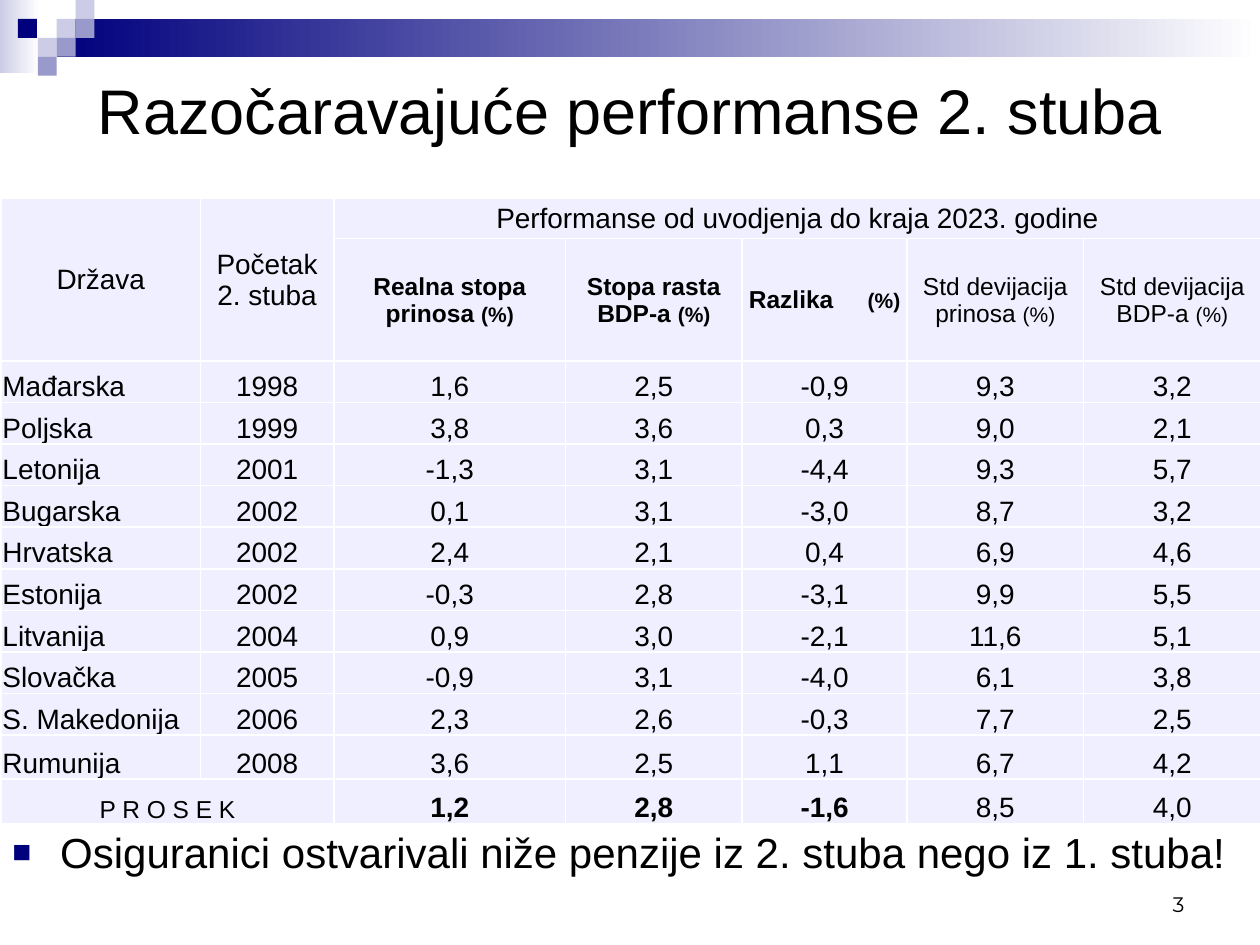
"""Build the slide on the disappointing performance of the second pension pillar."""
from dataclasses import dataclass

import lxml.etree
import pptx
import pptx.dml.color
import pptx.enum.shapes
import pptx.enum.text
import pptx.oxml
import pptx.oxml.ns
import pptx.util

ALIGN = pptx.enum.text.PP_ALIGN
ANCHOR = pptx.enum.text.MSO_ANCHOR
COLORS = {"navy": "00007D", "violet": "9999CC", "lilac": "CCCCE6",
          "cell": "EFEFFF", "white": "FFFFFF", "black": "000000"}
WIDTH, HEIGHT = pptx.util.Inches(10), pptx.util.Inches(7.5)
UNIT = pptx.util.Inches(0.15)
COLUMN_WIDTHS = [1.58, 1.06, 1.84, 1.4, 1.31, 1.4, 1.41]
ROW_HEIGHTS = [0.32, 0.97] + [0.33] * 9 + [0.35] * 2
COUNTRIES = [
    "Mađarska 1998 1,6 2,5 -0,9 9,3 3,2",
    "Poljska 1999 3,8 3,6 0,3 9,0 2,1",
    "Letonija 2001 -1,3 3,1 -4,4 9,3 5,7",
    "Bugarska 2002 0,1 3,1 -3,0 8,7 3,2",
    "Hrvatska 2002 2,4 2,1 0,4 6,9 4,6",
    "Estonija 2002 -0,3 2,8 -3,1 9,9 5,5",
    "Litvanija 2004 0,9 3,0 -2,1 11,6 5,1",
    "Slovačka 2005 -0,9 3,1 -4,0 6,1 3,8",
    "S. Makedonija 2006 2,3 2,6 -0,3 7,7 2,5",
    "Rumunija 2008 3,6 2,5 1,1 6,7 4,2",
]
AVERAGES = ["1,2", "2,8", "-1,6", "8,5", "4,0"]
MEASURES = ["Realna stopa prinosa", "Stopa rasta BDP-a", "Razlika",
            "Std devijacija prinosa", "Std devijacija BDP-a"]
BOLD_MEASURES = 3


@dataclass
class Block:
    """A header rectangle, measured in grid units; a second colour makes a gradient."""
    column: float
    row: float
    color: str
    columns: float = 1
    rows: float = 1
    end_color: str = ""


@dataclass
class TextPart:
    """One run of text with its look; spacing is extra points after each letter."""
    text: str
    size: float = 16
    bold: bool = False
    font: str = "Arial"
    spacing: float = 0


BLOCKS = [
    Block(0, 0, "lilac", 2.07, 3.87, "white"),
    Block(3, 1, "navy", 63.67, 2, "white"),
    Block(3, 1, "lilac"),
    Block(4, 0, "lilac"),
    Block(4, 1, "violet"),
    Block(2, 2, "lilac"),
    Block(0.95, 1, "navy"),
    Block(3, 2, "violet"),
    Block(2, 3, "violet"),
]


def rgb(name: str) -> pptx.dml.color.RGBColor:
    """Return a named colour."""
    return pptx.dml.color.RGBColor.from_string(COLORS[name])


def draw_block(slide, block: Block) -> None:
    """Draw one header rectangle."""
    shape = slide.shapes.add_shape(
        pptx.enum.shapes.MSO_SHAPE.RECTANGLE, int(block.column * UNIT), int(block.row * UNIT),
        int(block.columns * UNIT), int(block.rows * UNIT))
    shape.shadow.inherit = False
    shape.line.fill.background()
    if block.end_color:
        shape.fill.gradient()
        shape.fill.gradient_angle = 0
        for stop, color in zip(shape.fill.gradient_stops, (block.color, block.end_color)):
            stop.color.rgb = rgb(color)
    else:
        shape.fill.solid()
        shape.fill.fore_color.rgb = rgb(block.color)


def write(text_frame, parts: list[TextPart], alignment=ALIGN.CENTER, anchor=ANCHOR.MIDDLE):
    """Write the runs into the first paragraph and return it."""
    text_frame.word_wrap = True
    text_frame.vertical_anchor = anchor
    paragraph = text_frame.paragraphs[0]
    paragraph.alignment = alignment
    for part in parts:
        run = paragraph.add_run()
        run.text = part.text
        run.font.size = pptx.util.Pt(part.size)
        run.font.bold = part.bold
        run.font.name = part.font
        run.font.color.rgb = rgb("black")
        if part.spacing:
            run.font._element.set("spc", str(round(part.spacing * 100)))
    return paragraph


def add_text(slide, left: float, top: float, width: float, height: float,
             parts: list[TextPart], alignment, anchor):
    """Add a text box placed by shares of the slide's size and return its paragraph."""
    box = slide.shapes.add_textbox(int(left * WIDTH), int(top * HEIGHT),
                                   int(width * WIDTH), int(height * HEIGHT))
    return write(box.text_frame, parts, alignment, anchor)


def add_bullet(paragraph) -> None:
    """Give the paragraph a hanging square bullet."""
    properties = paragraph._p.get_or_add_pPr()
    properties.set("marL", str(pptx.util.Inches(0.38)))
    properties.set("indent", str(pptx.util.Inches(-0.38)))
    color = lxml.etree.SubElement(properties, pptx.oxml.ns.qn("a:buClr"))
    lxml.etree.SubElement(color, pptx.oxml.ns.qn("a:srgbClr"), val=COLORS["navy"])
    lxml.etree.SubElement(properties, pptx.oxml.ns.qn("a:buSzPct"), val="75000")
    lxml.etree.SubElement(properties, pptx.oxml.ns.qn("a:buFont"), typeface="Arial")
    lxml.etree.SubElement(properties, pptx.oxml.ns.qn("a:buChar"), char="■")


def style_cell(cell) -> None:
    """Fill the cell, tighten its margins and draw white borders."""
    cell.fill.solid()
    cell.fill.fore_color.rgb = rgb("cell")
    cell.margin_left = cell.margin_right = cell.margin_top = pptx.util.Inches(0.01)
    cell.margin_bottom = 0
    properties = cell._tc.get_or_add_tcPr()
    for index, side in enumerate(("lnL", "lnR", "lnT", "lnB")):
        properties.insert(index, pptx.oxml.parse_xml(
            f'<a:{side} {pptx.oxml.ns.nsdecls("a")} w="12700"><a:solidFill>'
            f'<a:srgbClr val="{COLORS["white"]}"/></a:solidFill></a:{side}>'))


def fill_cell(cell, parts: list[TextPart], alignment=ALIGN.CENTER, anchor=ANCHOR.BOTTOM) -> None:
    """Write the runs into a table cell."""
    write(cell.text_frame, parts, alignment)
    cell.vertical_anchor = anchor


def add_performance_table(slide) -> None:
    """Add the table of returns and growth by country."""
    table = slide.shapes.add_table(
        len(ROW_HEIGHTS), len(COLUMN_WIDTHS), int(0.001 * WIDTH), int(0.21 * HEIGHT), WIDTH,
        pptx.util.Inches(sum(ROW_HEIGHTS))).table
    table.first_row = table.horz_banding = False
    for column, width in zip(table.columns, COLUMN_WIDTHS):
        column.width = pptx.util.Inches(width)
    for row, height in zip(table.rows, ROW_HEIGHTS):
        row.height = pptx.util.Inches(height)
    for cell in table.iter_cells():
        style_cell(cell)

    last_row = len(ROW_HEIGHTS) - 1
    table.cell(0, 0).merge(table.cell(1, 0))
    table.cell(0, 1).merge(table.cell(1, 1))
    table.cell(0, 2).merge(table.cell(0, 6))
    table.cell(last_row, 0).merge(table.cell(last_row, 1))
    headings = ["Država", "Početak 2. stuba", "Performanse od uvodjenja do kraja 2023. godine"]
    for column, heading in enumerate(headings):
        fill_cell(table.cell(0, column), [TextPart(heading)], anchor=ANCHOR.MIDDLE)
    for index, (measure, average) in enumerate(zip(MEASURES, AVERAGES)):
        bold = index < BOLD_MEASURES
        gap = TextPart(" ", 14, bold, spacing=15.6 if measure == "Razlika" else 0)
        fill_cell(table.cell(1, index + 2),
                  [TextPart(measure, 14, bold), gap, TextPart("(%)", 12, bold)],
                  anchor=ANCHOR.MIDDLE)
        fill_cell(table.cell(last_row, index + 2), [TextPart(average, bold=bold)])
    for row, country in enumerate(COUNTRIES, start=2):
        for column, value in enumerate(country.rsplit(" ", 6)):
            fill_cell(table.cell(row, column), [TextPart(value)],
                      ALIGN.CENTER if column else ALIGN.LEFT)
    fill_cell(table.cell(last_row, 0), [TextPart("P R O S E K", 14)])


def main() -> None:
    """Build and save the presentation."""
    presentation = pptx.Presentation()
    presentation.slide_width, presentation.slide_height = WIDTH, HEIGHT
    slide = presentation.slides.add_slide(presentation.slide_layouts[5])
    for block in BLOCKS:
        draw_block(slide, block)
    title = slide.shapes.title
    title.left, title.top = int(0.05 * WIDTH), int(0.067 * HEIGHT)
    title.width, title.height = int(0.9 * WIDTH), int(0.097 * HEIGHT)
    write(title.text_frame, [TextPart("Razočaravajuće performanse 2. stuba", 36)])
    add_text(slide, 0.717, 0.91, 0.233, 0.067, [TextPart("3", 12, font="Montserrat")],
             ALIGN.RIGHT, ANCHOR.BOTTOM)
    conclusion = "Osiguranici ostvarivali niže penzije iz 2. stuba nego iz 1. stuba!"
    add_bullet(add_text(slide, 0, 0.868, 1, 0.065, [TextPart(conclusion, 24)],
                        ALIGN.LEFT, ANCHOR.TOP))
    add_performance_table(slide)
    presentation.save("out.pptx")


if __name__ == "__main__":
    main()
